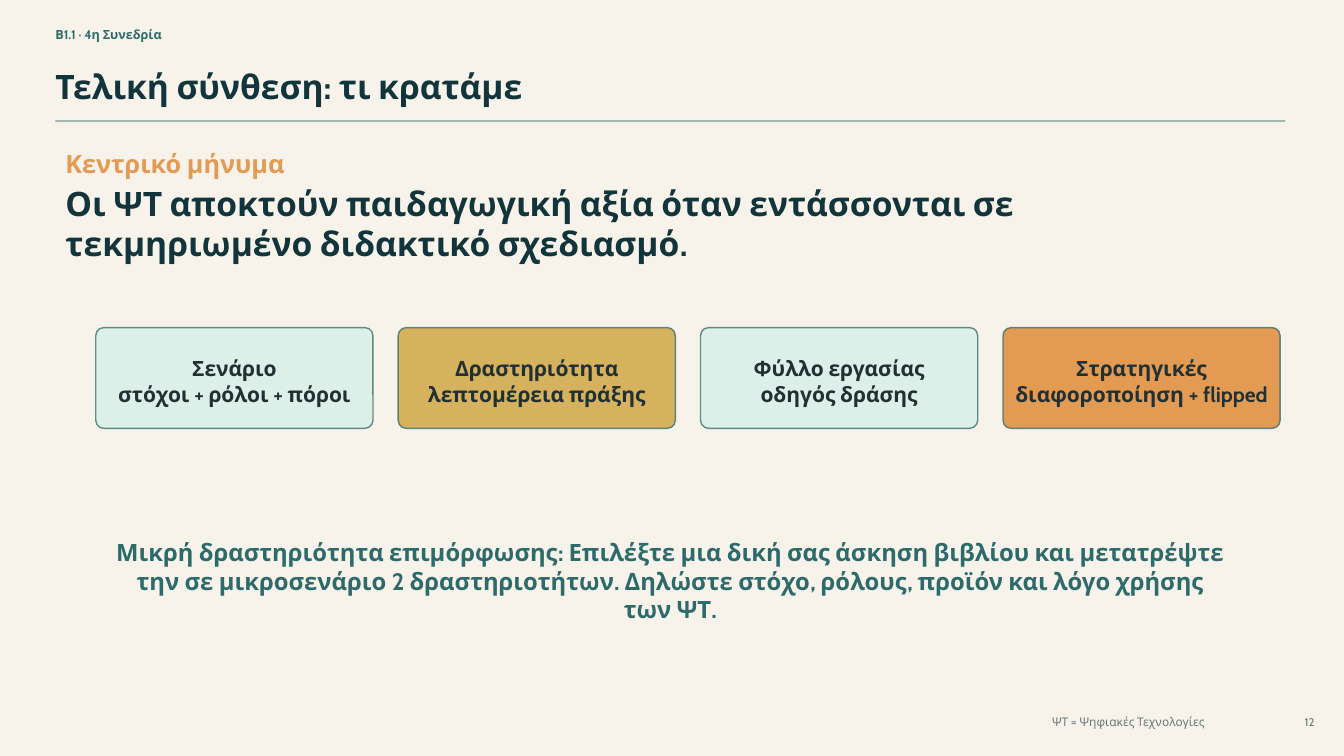
from lxml import etree
from pptx import Presentation
from pptx.dml.color import RGBColor
from pptx.enum.shapes import MSO_CONNECTOR, MSO_SHAPE
from pptx.enum.text import MSO_ANCHOR, PP_ALIGN
from pptx.oxml.ns import qn
from pptx.util import Pt

FONT = "Cabin"
CREAM = RGBColor(0xF7, 0xF3, 0xEA)
TEAL = RGBColor(0x2D, 0x6A, 0x6A)
NAVY = RGBColor(0x12, 0x34, 0x3B)
INK = RGBColor(0x20, 0x30, 0x33)
GREY = RGBColor(0x6B, 0x77, 0x79)
MINT = RGBColor(0xDC, 0xEF, 0xE9)
GOLD = RGBColor(0xD6, 0xB1, 0x5E)
ORANGE = RGBColor(0xE3, 0x9A, 0x53)

CARDS = [
    ("Σενάριο\nστόχοι + ρόλοι + πόροι", MINT),
    ("Δραστηριότητα\nλεπτομέρεια πράξης", GOLD),
    ("Φύλλο εργασίας\nοδηγός δράσης", MINT),
    ("Στρατηγικές\nδιαφοροποίηση + flipped", ORANGE),
]


def add_text(s, box, text, size, color, bold=True, align=PP_ALIGN.LEFT):
    tf = s.shapes.add_textbox(*map(Pt, box)).text_frame
    tf.word_wrap = True
    tf.vertical_anchor = MSO_ANCHOR.MIDDLE
    tf.margin_left = tf.margin_right = tf.margin_top = tf.margin_bottom = 0
    tf.text = text
    for p in tf.paragraphs:
        p.alignment = align
        for r in p.runs:
            r.font.name = FONT
            r.font.size = Pt(size)
            r.font.bold = bold
            r.font.color.rgb = color


def style_line(sp, opacity):
    sp.line.color.rgb = TEAL
    sp.line.width = Pt(1)
    color = sp.line._ln.find(".//" + qn("a:srgbClr"))
    etree.SubElement(color, qn("a:alpha")).set("val", str(opacity * 1000))


def add_header(s, x, y, w):
    add_text(s, (x, y, 259.2, 18), "Β1.1 · 4η Συνεδρία", 9, TEAL)
    add_text(s, (x, y + 25.92, 640.8, 39.6), "Τελική σύνθεση: τι κρατάμε", 24, NAVY)
    rule_y = Pt(y + 70.56)
    rule = s.shapes.add_connector(MSO_CONNECTOR.STRAIGHT, Pt(x), rule_y, Pt(x + w), rule_y)
    style_line(rule, 65)
    etree.SubElement(rule._element.spPr, qn("a:effectLst"))


def add_message(s, x, y, w):
    add_text(s, (x, y, 187.2, 25.2), "Κεντρικό μήνυμα", 18, ORANGE)
    add_text(s, (x, y + 32.4, w, 44.64),
             "Οι ΨΤ αποκτούν παιδαγωγική αξία όταν εντάσσονται σε "
             "τεκμηριωμένο διδακτικό σχεδιασμό.", 24, NAVY)


def add_card(s, x, y, w, h, text, fill):
    sp = s.shapes.add_shape(MSO_SHAPE.ROUNDED_RECTANGLE, Pt(x), Pt(y), Pt(w), Pt(h))
    sp.adjustments[0] = 0.08
    sp.shadow.inherit = False
    sp.fill.solid()
    sp.fill.fore_color.rgb = fill
    style_line(sp, 75)
    pad = 8.64
    add_text(s, (x + pad, y + pad, w - 2 * pad, h - 1.5 * pad), text, 15, INK,
             align=PP_ALIGN.CENTER)


def add_cards(s, x, y, w, h, gap=18):
    card_w = (w - gap * (len(CARDS) - 1)) / len(CARDS)
    for i, (text, fill) in enumerate(CARDS):
        add_card(s, x + i * (card_w + gap), y, card_w, h, text, fill)


def add_activity(s, x, y, w, h):
    add_text(s, (x, y, w, h),
             "Μικρή δραστηριότητα επιμόρφωσης: Επιλέξτε μια δική σας άσκηση βιβλίου "
             "και μετατρέψτε την σε μικροσενάριο 2 δραστηριοτήτων. Δηλώστε στόχο, "
             "ρόλους, προϊόν και λόγο χρήσης των ΨΤ.", 17, TEAL, align=PP_ALIGN.CENTER)


def add_footer(s, x, y, w):
    add_text(s, (x, y, 241.2, 15.84), "ΨΤ = Ψηφιακές Τεχνολογίες", 8.5, GREY, False,
             PP_ALIGN.RIGHT)
    add_text(s, (x + w - 15.84, y + 0.72, 15.84, 14.4), "12", 8, GREY, False, PP_ALIGN.RIGHT)


def main():
    prs = Presentation()
    prs.slide_width, prs.slide_height = Pt(960), Pt(540)
    s = prs.slides.add_slide(prs.slide_layouts[6])
    s.background.fill.solid()
    s.background.fill.fore_color.rgb = CREAM
    add_header(s, 39.6, 15.84, 878.4)
    add_message(s, 46.8, 104.4, 792)
    add_cards(s, 68.4, 234, 846, 72)
    add_activity(s, 82.8, 385.2, 792, 59.04)
    add_footer(s, 619.2, 507.6, 319.68)
    prs.save("out.pptx")


if __name__ == "__main__":
    main()
